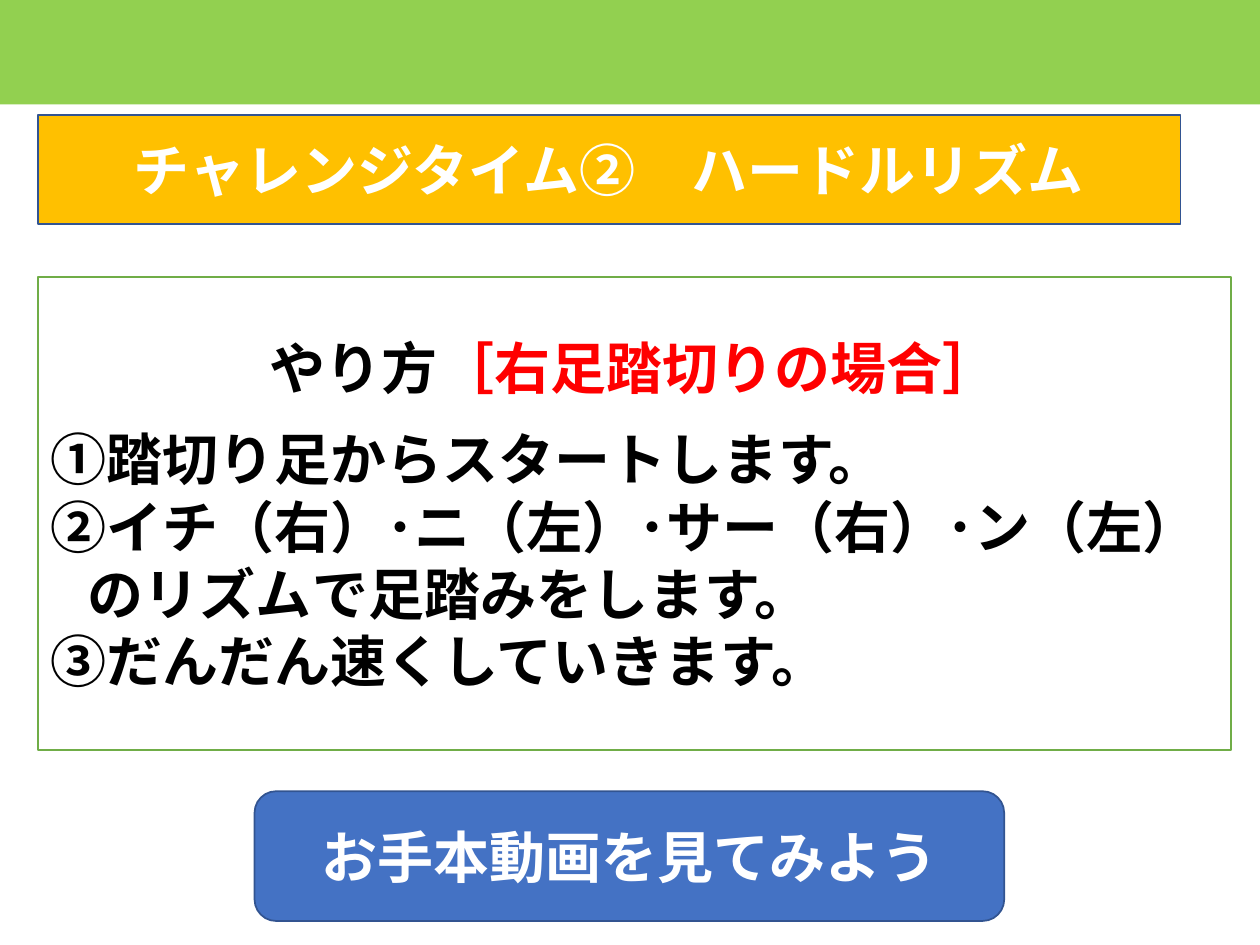
from pptx import Presentation
from pptx.dml.color import RGBColor
from pptx.enum import shapes, text
from pptx.util import Inches, Pt

WHITE = RGBColor(0xFF, 0xFF, 0xFF)
BLACK = RGBColor(0x00, 0x00, 0x00)
RED = RGBColor(0xFF, 0x00, 0x00)
LIME = RGBColor(0x92, 0xD0, 0x50)
GREEN = RGBColor(0x70, 0xAD, 0x47)
AMBER = RGBColor(0xFF, 0xC0, 0x00)
BLUE = RGBColor(0x44, 0x72, 0xC4)
NAVY = RGBColor(0x32, 0x54, 0x91)


def style_box(box, fill, line=None):
    box.fill.solid()
    box.fill.fore_color.rgb = fill
    if line is None:
        box.line.fill.background()
    else:
        box.line.color.rgb = line
        box.line.width = Pt(1)
    frame = box.text_frame
    frame.word_wrap = True
    frame.auto_size = text.MSO_AUTO_SIZE.NONE
    frame.vertical_anchor = text.MSO_ANCHOR.MIDDLE


def write(para, runs, align=text.PP_ALIGN.CENTER):
    para.alignment = align
    para.line_spacing = 1.0
    for words, color in runs:
        span = para.add_run()
        span.text = words
        span.font.name = "Calibri"
        span.font.size = Pt(32)
        span.font.bold = True
        span.font.color.rgb = color


deck = Presentation()
deck.slide_width, deck.slide_height = Inches(10), Inches(7.5)
page = deck.slides.add_slide(deck.slide_layouts[5])

# Title
title = page.shapes.title
title.left, title.top = Inches(0.3), Inches(0.91)
title.width, title.height = Inches(9.07), Inches(0.87)
style_box(title, AMBER, NAVY)
write(title.text_frame.paragraphs[0], [("チャレンジタイム②　ハードルリズム", WHITE)])

# Top band
band = page.shapes.add_shape(shapes.MSO_SHAPE.RECTANGLE, Inches(-0.02), 0,
                             Inches(10.02), Inches(0.83))
band.shadow.inherit = False
style_box(band, LIME)

# Instructions: heading, then numbered steps
guide = page.shapes.add_shape(shapes.MSO_SHAPE.RECTANGLE, Inches(0.3), Inches(2.2),
                              Inches(9.47), Inches(3.75))
guide.shadow.inherit = False
style_box(guide, WHITE, GREEN)
heading = guide.text_frame.paragraphs[0]
write(heading, [("やり方", BLACK), ("［右足踏切りの場合］", RED)])
heading.space_after = Pt(14)

steps = [
    ("①踏切り足からスタートします。", 0),
    ("②イチ（右）･ニ（左）･サー（右）･ン（左）", 0),
    ("のリズムで足踏みをします。", 0.3),
    ("③だんだん速くしていきます。", 0),
]
for words, indent in steps:
    para = guide.text_frame.add_paragraph()
    write(para, [(words, BLACK)], text.PP_ALIGN.LEFT)
    para._p.get_or_add_pPr().set("marL", str(Inches(indent)))

# Video button
button = page.shapes.add_shape(shapes.MSO_SHAPE.ROUNDED_RECTANGLE, Inches(2.02),
                               Inches(6.28), Inches(5.95), Inches(1.03))
button.shadow.inherit = False
style_box(button, BLUE, NAVY)
write(button.text_frame.paragraphs[0], [("お手本動画を見てみよう", WHITE)])

deck.save("out.pptx")
